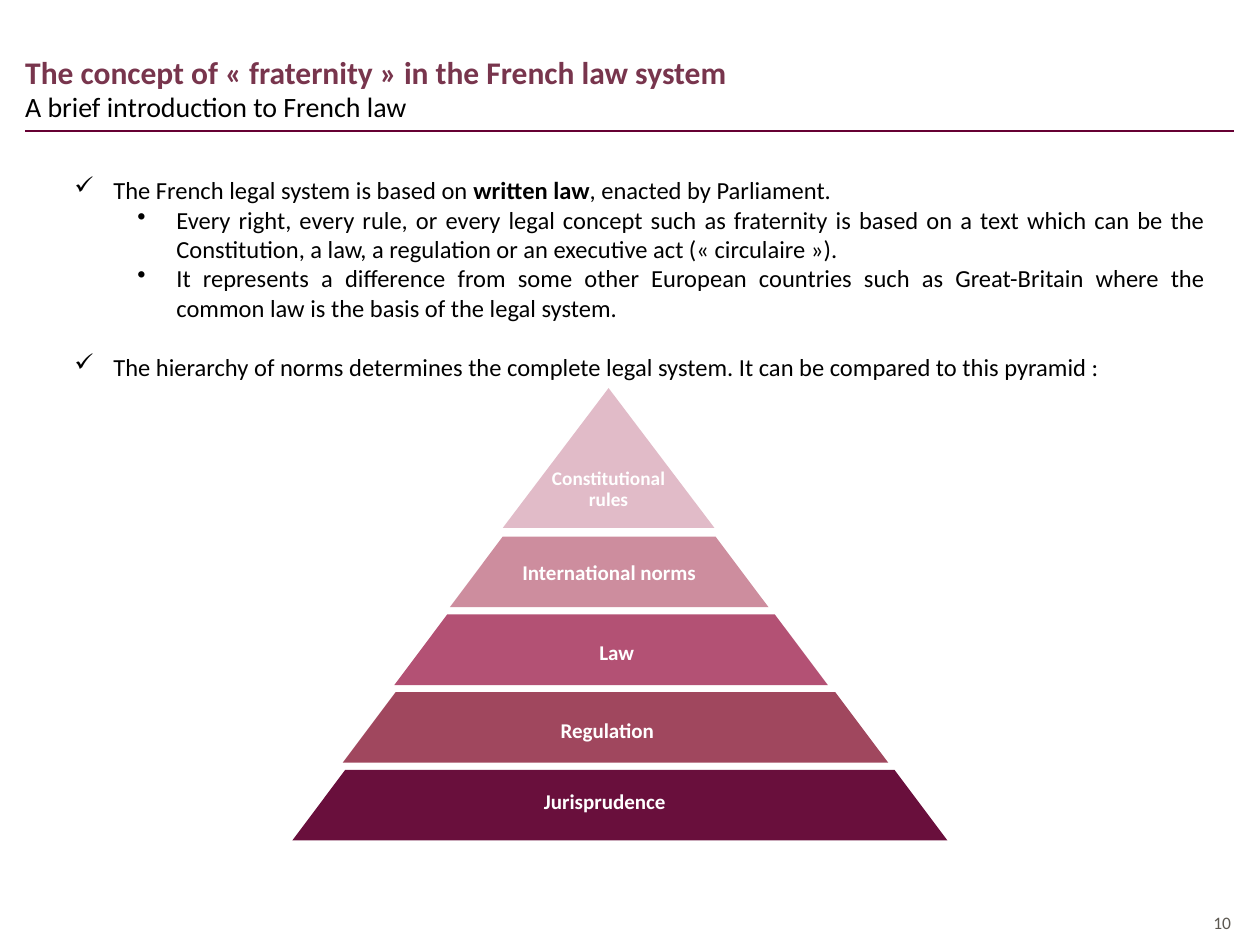
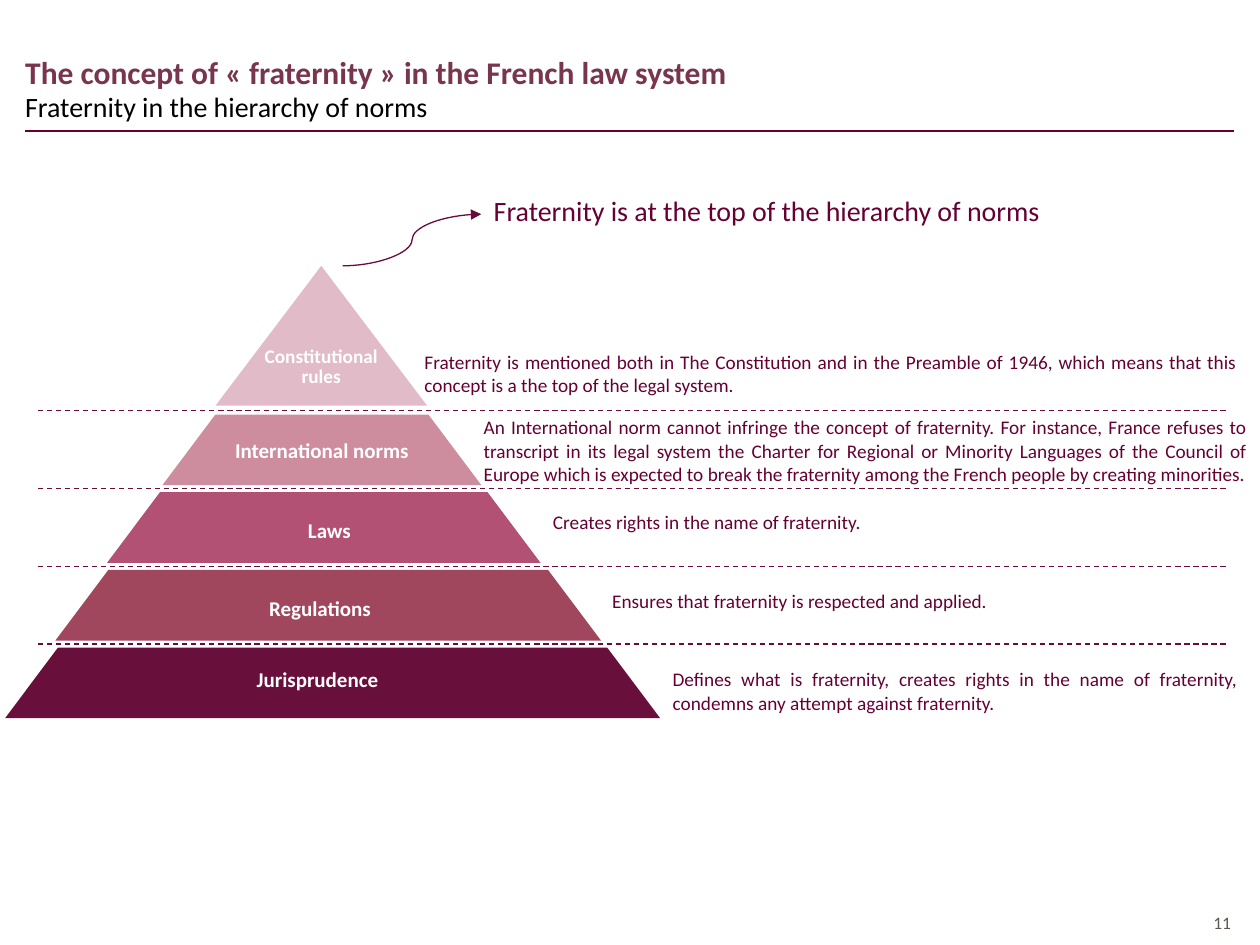
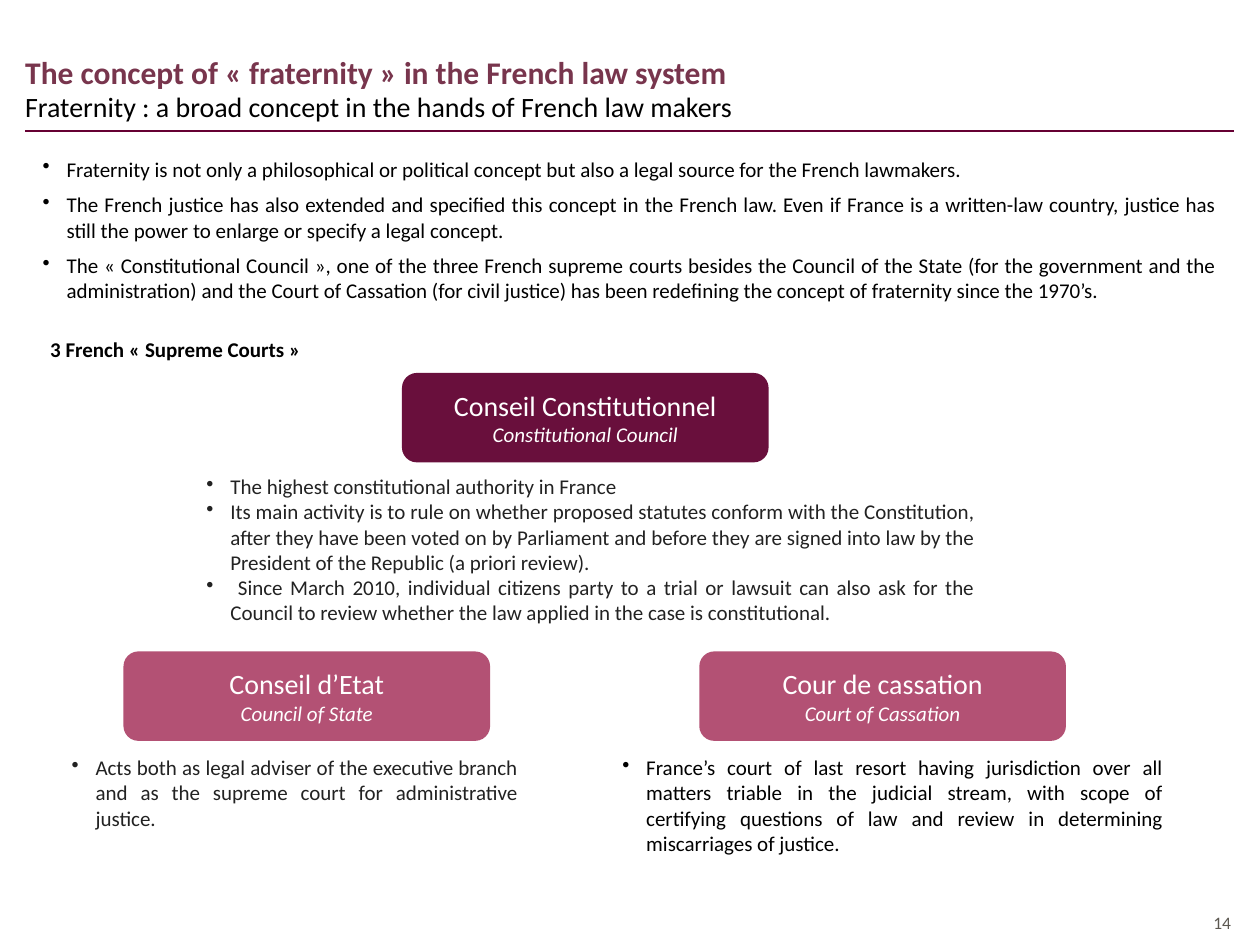
from lxml.etree import SubElement as Sub
from pptx import Presentation
from pptx.dml.color import RGBColor as Rgb
from pptx.enum.dml import MSO_LINE as Dash
from pptx.enum.shapes import MSO_CONNECTOR as Link, MSO_SHAPE as Form
from pptx.enum.text import MSO_ANCHOR as Anchor, MSO_AUTO_SIZE as Fit, PP_ALIGN as Align
from pptx.oxml.ns import qn
from pptx.util import Inches, Pt

COLS, ROWS, CELL = 100, 75, 0.1
HUE = {"black": "000000", "ink": "222222", "grey": "5C5851", "white": "FFFFFF",
       "title": "78354D", "wine": "660033", "dash": "690C3B", "top": "E1BBC8",
       "norm": "CD8D9E", "law": "B35174", "rule": "A0475E", "base": "690F3C"}
HEAD = "The concept of « fraternity » in the French law system"
PAD = (1, 0.5, 1, 0.5)
FLAT = (0, 0.5, 1, 0.5)
BULLET = {"mar": 1.9, "hang": 1.9, "sign": "•"}
TICK = {"mar": 7, "hang": 3.1, "sign": "✓"}
POINT = {"mar": 12, "hang": 3.1, "sign": "•"}
JUST = {"alignment": Align.JUSTIFY}
MID = {"alignment": Align.CENTER}
LABEL = {"size": 12, "hue": "white", "bold": True}
STEP, FIRST = 6.17, 11.8
SLABS = [("norm", 12.5, 25.3, 16.3, 1.3, 17.7), ("law", 8.1, 34.4, 16.6, 1.5, 18.3),
         ("rule", 4, 43.3, 16.3, 1.5, 17.4), ("base", 0, 52, 16.1, 1, 17.4)]


def grid(*cells):
    """Turn grid cells into lengths."""
    return [Inches(round(cell * CELL, 3)) for cell in cells]


def assign(item, values):
    """Set each attribute named in a dict."""
    for key, value in values.items():
        setattr(item, key, value)


def style(run, size=12, hue="black", **more):
    """Format the font of one run."""
    assign(run.font, {"name": "Calibri", "size": Pt(size), **more})
    run.font.color.rgb = Rgb.from_string(HUE[hue])


def mark(para, mar, hang, sign):
    """Give a paragraph a hanging bullet."""
    props = para._p.get_or_add_pPr()
    left, dent = grid(mar, -hang)
    props.set("marL", str(left))
    props.set("indent", str(dent))
    Sub(props, qn("a:buChar")).set("char", sign)


def write(shape, paras, font, form=None, pad=PAD, anchor=Anchor.TOP, wrap=True):
    """Fill a shape with paragraphs of (runs, bullet, extra form)."""
    frame = shape.text_frame
    sides = ("margin_left", "margin_top", "margin_right", "margin_bottom")
    assign(frame, {"word_wrap": wrap, "auto_size": Fit.NONE, "vertical_anchor": anchor,
                   **dict(zip(sides, grid(*pad)))})
    for i, (runs, bullet, extra) in enumerate(paras):
        para = frame.add_paragraph() if i else frame.paragraphs[0]
        assign(para, {**(form or {}), **extra})
        if bullet:
            mark(para, **bullet)
        for text, more in runs:
            run = para.add_run()
            run.text = text
            style(run, **{**font, **more})


def plain(*texts, bullet=None):
    """Make one-run paragraphs."""
    return [([(text, {})], bullet, {}) for text in texts]


def note(slide, box, paras, font, form=None, **more):
    """Add a text box."""
    write(slide.shapes.add_textbox(*grid(*box)), paras, font, form, **more)


def block(slide, form, box, hue):
    """Add a flat filled shape."""
    shape = slide.shapes.add_shape(form, *grid(*box))
    shape.shadow.inherit = False
    shape.fill.solid()
    shape.fill.fore_color.rgb = Rgb.from_string(HUE[hue])
    shape.line.fill.background()
    return shape


def rule(slide, ends, hue, width=0.75, dash=None, kind=Link.STRAIGHT):
    """Draw a line between two points."""
    line = slide.shapes.add_connector(kind, *grid(*ends))
    assign(line.line, {"width": Pt(width), "dash_style": dash})
    line.line.color.rgb = Rgb.from_string(HUE[hue])
    Sub(line._element.spPr, qn("a:effectLst"))
    return line


def page(deck, sub, number):
    """Start a slide with its heading, rule and number."""
    slide = deck.slides.add_slide(deck.slide_layouts[5])
    title = slide.shapes.title
    spots = ("left", "top", "width", "height")
    assign(title, dict(zip(spots, grid(2, 3.7, COLS - 4, 3.2))))
    write(title, plain(HEAD), {"size": 18, "hue": "title", "bold": True},
          {"alignment": Align.LEFT}, FLAT)
    note(slide, (2, 6.6, COLS - 4, 3.6), plain(sub), {"size": 16}, pad=FLAT)
    rule(slide, (2, 10.4, COLS - 2.1, 10.4), "wine", 1)
    note(slide, (63.8, ROWS - 3.1, 33.9, 2.7), plain(number),
         {"size": 10, "hue": "grey"}, {"alignment": Align.RIGHT}, pad=(0, 0.5, 0, 0.5))
    return slide


def pyramid(slide, left, top, names):
    """Stack a tip and four slabs from a corner."""
    tip = block(slide, Form.ISOSCELES_TRIANGLE, (left + 16.7, top, 16.8, 11.1), "top")
    write(tip, plain("Constitutional", "rules"), {**LABEL, "size": 11},
          {**MID, "line_spacing": 0.9}, (0, 0, 0, 1.4), Anchor.BOTTOM, False)
    for i, (name, (hue, x, wide, tag, drop, span)) in enumerate(zip(names, SLABS)):
        y = top + FIRST + i * STEP
        slab = block(slide, Form.TRAPEZOID, (left + x, y, wide, 5.6), hue)
        slab.adjustments[0] = 0.75
        note(slide, (left + tag, y + drop, span, 3), plain(name), LABEL, MID)


def court(slide, left, top, name, gloss, hue):
    """Add a card with a court's name and its translation."""
    card = block(slide, Form.ROUNDED_RECTANGLE, (left, top, 29.1, 7.1), hue)
    write(card, [([(name, {"size": 16})], None, {}), ([(gloss, {"italic": True})], None, {})],
          {"hue": "white"}, MID, anchor=Anchor.MIDDLE)


def intro(deck):
    """Build the slide on French law."""
    slide = page(deck, "A brief introduction to French law", "10")
    lead = [("The French legal system is based on ", {}), ("written law", {"bold": True}),
            (", enacted by Parliament.", {})]
    points = plain(
        "Every right, every rule, or every legal concept such as fraternity is based on a text which can be the Constitution, a law, a regulation or an executive act (« circulaire »).",
        "It represents a difference from some other European countries such as Great-Britain where the common law is the basis of the legal system.",
        bullet=POINT)
    last = "The hierarchy of norms determines the complete legal system. It can be compared to this pyramid :"
    paras = [(lead, TICK, {}), *points, ([(last, {})], TICK, {"space_before": Pt(17)})]
    note(slide, (2, 13.9, 93.7, 50.4), paras, {"size": 14}, JUST, pad=(0, 0, 0, 0))
    pyramid(slide, 23.2, 30.8, ("International norms", "Law", "Regulation", "Jurisprudence"))


def ranks(deck):
    """Build the slide on the hierarchy of norms."""
    slide = page(deck, "Fraternity in the hierarchy of norms", "11")
    top = 21.1
    pyramid(slide, 0.4, top, ("International norms", "Laws", "Regulations", "Jurisprudence"))
    for i in range(len(SLABS)):
        y = top + FIRST - 0.3 + i * STEP
        rule(slide, (3, y, 97.4, y), "dash", dash=Dash.DASH)
    notes = [
        (32.7, 27.3, 66.5, "Fraternity is mentioned both in The Constitution and in the Preamble of 1946, which means that this concept is a the top of the legal system."),
        (37.4, 32.5, 62.6, "An International norm cannot infringe the concept of fraternity. For instance, France refuses to transcript in its legal system the Charter for Regional or Minority Languages of the Council of Europe which is expected to break the fraternity among the French people by creating minorities."),
        (42.9, 40, 56.3, "Creates rights in the name of fraternity."),
        (47.6, 46.3, 51.6, "Ensures that fraternity is respected and applied."),
        (52.4, 52.5, 46.8, "Defines what is fraternity, creates rights in the name of fraternity, condemns any attempt against fraternity.")]
    for left, y, wide, text in notes:
        note(slide, (left, y, wide, 4.7), plain(text), {"size": 11, "hue": "wine"}, JUST)
    curve = rule(slide, (27.2, top, 38.2, 17), "dash", kind=Link.CURVE)
    Sub(curve.line._get_or_add_ln(), qn("a:tailEnd")).set("type", "triangle")
    note(slide, (38.2, 14.9, 52.8, 3.7),
         plain("Fraternity is at the top of the hierarchy of norms"), {"size": 16, "hue": "wine"})


def courts(deck):
    """Build the slide on the three courts."""
    slide = page(deck, "Fraternity : a broad concept in the hands of French law makers", "14")
    facts = plain(
        "Fraternity is not only a philosophical or political concept but also a legal source for the French lawmakers.",
        "The French justice has also extended and specified this concept in the French law. Even if France is a written-law country, justice has still the power to enlarge or specify a legal concept.",
        "The « Constitutional Council », one of the three French supreme courts besides the Council of the State (for the government and the administration) and the Court of Cassation (for civil justice) has been redefining the concept of fraternity since the 1970’s.",
        bullet=BULLET)
    note(slide, (2.4, 11.9, 95.2, 14), facts, {}, {**JUST, "space_after": Pt(6)})
    note(slide, (3, 26.2, 40.9, 3), plain("3 French « Supreme Courts »"), {"bold": True})
    court(slide, 31.9, 29.6, "Conseil Constitutionnel", "Constitutional Council", "base")
    court(slide, 9.8, 51.7, "Conseil d’Etat", "Council of State", "law")
    court(slide, 55.5, 51.7, "Cour de cassation", "Court of Cassation", "law")
    roles = [
        ((15.4, 37.1, 63, 13.1), "ink", [
            "The highest constitutional authority in France",
            "Its main activity is to rule on whether proposed statutes conform with the Constitution, after they have been voted on by Parliament and before they are signed into law by the President of the Republic (a priori review).",
            " Since March 2010, individual citizens party to a trial or lawsuit can also ask for the Council to review whether the law applied in the case is constitutional."]),
        ((4.7, 59.4, 37.4, 7.1), "ink", [
            "Acts both as legal adviser of the executive branch and as the supreme court for administrative justice."]),
        ((48.4, 59.4, 44.9, 9.1), "black", [
            "France’s court of last resort having jurisdiction over all matters triable in the judicial stream, with scope of certifying questions of law and review in determining miscarriages of justice."])]
    for box, hue, texts in roles:
        note(slide, box, plain(*texts, bullet=BULLET), {"hue": hue}, JUST)


def main():
    """Build and save the deck."""
    deck = Presentation()
    deck.slide_width, deck.slide_height = grid(COLS, ROWS)
    for build in (intro, ranks, courts):
        build(deck)
    deck.save("out.pptx")


if __name__ == "__main__":
    main()
